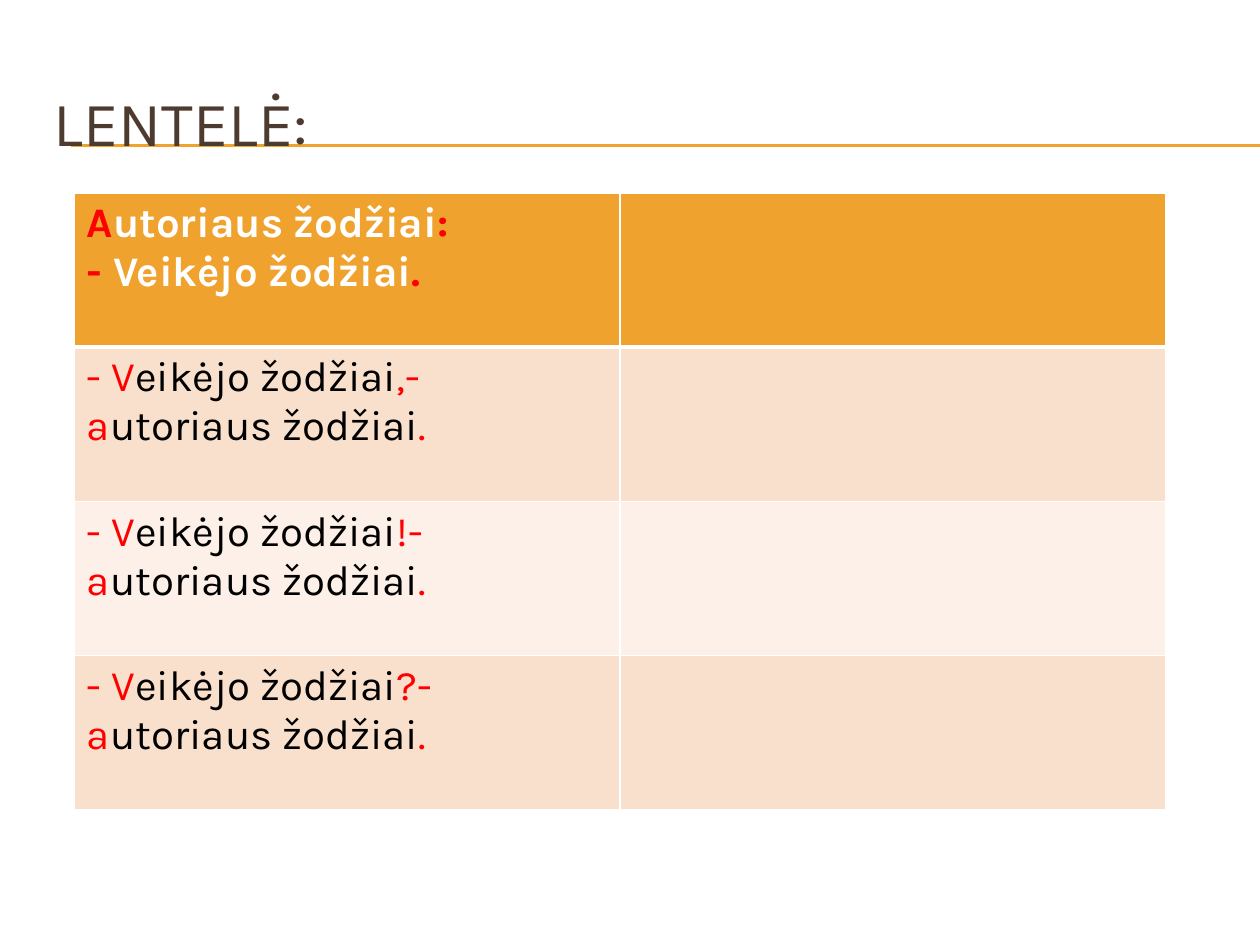
from lxml import etree
from pptx import Presentation
from pptx.dml.color import RGBColor
from pptx.enum.shapes import MSO_CONNECTOR
from pptx.enum.text import MSO_ANCHOR
from pptx.oxml.ns import qn
from pptx.util import Inches, Pt

FONT = "Karla"
ORANGE = RGBColor(0xF0, 0xA2, 0x2E)
BROWN = RGBColor(0x4E, 0x3B, 0x30)
RED = RGBColor(0xFF, 0x00, 0x00)
BLACK = RGBColor(0x00, 0x00, 0x00)
WHITE = RGBColor(0xFF, 0xFF, 0xFF)
PEACH = RGBColor(0xF9, 0xE0, 0xCD)
CREAM = RGBColor(0xFC, 0xF0, 0xE8)


def set_borders(cell, widths):
    """Add white borders; widths are points for left, right, top, bottom."""
    tcPr = cell._tc.get_or_add_tcPr()
    for i, (side, width) in enumerate(zip("LRTB", widths)):
        ln = etree.Element(qn(f"a:ln{side}"), w=str(Pt(width)))
        fill = etree.SubElement(ln, qn("a:solidFill"))
        etree.SubElement(fill, qn("a:srgbClr"), val=str(WHITE))
        tcPr.insert(i, ln)


prs = Presentation()
prs.slide_width, prs.slide_height = Inches(10), Inches(7.5)
s = prs.slides.add_slide(prs.slide_layouts[6])

# Double rule under the title
for y in (1.15, 1.16):
    rule = s.shapes.add_connector(MSO_CONNECTOR.STRAIGHT, Inches(0.56), Inches(y),
                                  Inches(10), Inches(y))
    rule.line.color.rgb = ORANGE
    rule.line.width = Pt(0.75)
    etree.SubElement(rule._element.spPr, qn("a:effectLst"))

# Title
title = s.shapes.add_textbox(Inches(0.33), Inches(0.5), Inches(9.5), Inches(0.92))
tf = title.text_frame
tf.word_wrap = True
tf.vertical_anchor = MSO_ANCHOR.MIDDLE
p = tf.paragraphs[0]
p.text = "LENTELĖ:"
p.font.name, p.font.size, p.font.color.rgb = FONT, Pt(36), BROWN

# Table content: each paragraph is a list of (text, is punctuation mark to stress)
header = [
    [("A", True), ("utoriaus žodžiai", False), (":", True)],
    [("- ", True), ("Veikėjo žodžiai", False), (".", True)],
]
rows = [header] + [
    [[("- V", True), ("eikėjo žodžiai", False), (f"{mark}- a", True),
      ("utoriaus žodžiai", False), (".", True)]]
    for mark in ",!?"
]
fills = [ORANGE, PEACH, CREAM, PEACH]

# Table
table = s.shapes.add_table(len(rows), 2, Inches(0.59), Inches(1.53),
                           Inches(8.66), Inches(4.9)).table
for i, (paragraphs, color) in enumerate(zip(rows, fills)):
    for cell in table.rows[i].cells:
        cell.fill.solid()
        cell.fill.fore_color.rgb = color
        set_borders(cell, (1, 1, 3 if i == 1 else 1, 3 if i == 0 else 1))
    tf = table.cell(i, 0).text_frame
    for j, parts in enumerate(paragraphs):
        p = tf.add_paragraph() if j else tf.paragraphs[0]
        p.font.name, p.font.size, p.font.bold = FONT, Pt(24), i == 0
        for text, stressed in parts:
            r = p.add_run()
            r.text = text
            r.font.color.rgb = RED if stressed else WHITE if i == 0 else BLACK

prs.save("out.pptx")
